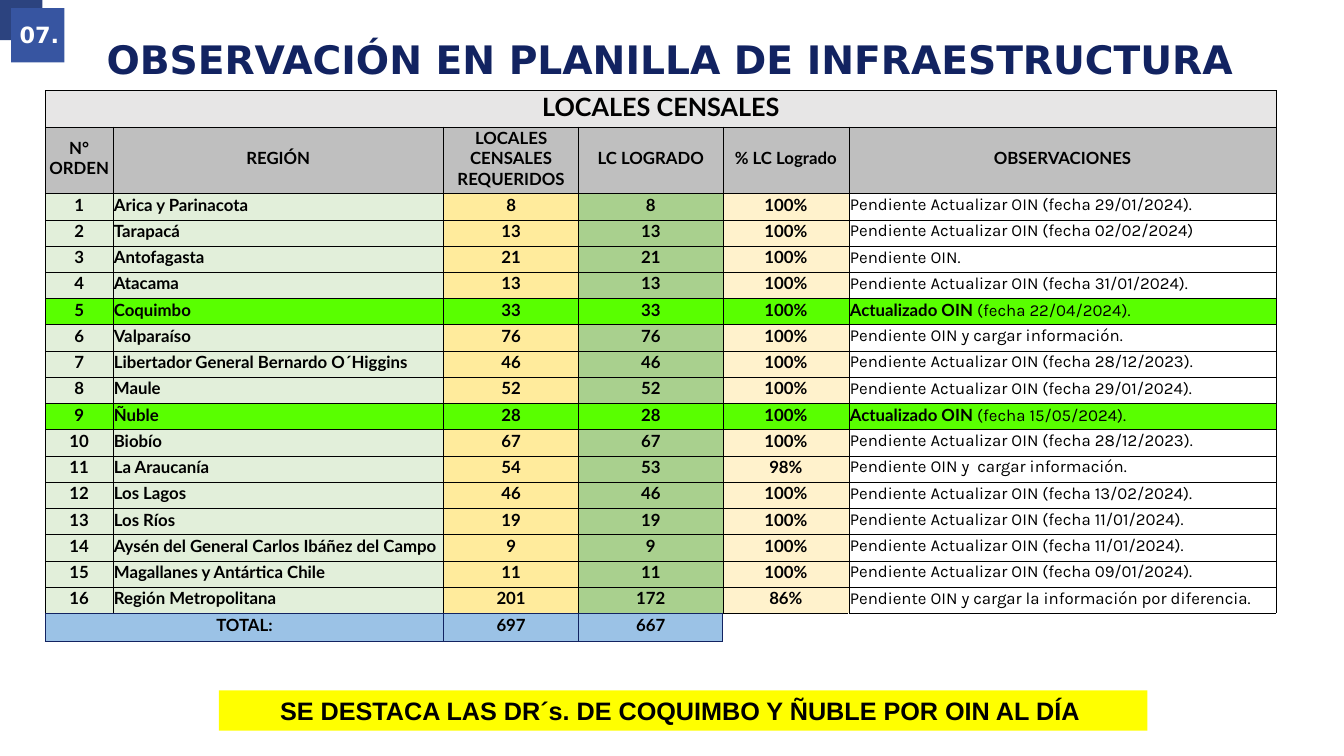
from lxml import etree
from pptx import Presentation
from pptx.dml.color import RGBColor
from pptx.enum.shapes import MSO_SHAPE
from pptx.enum.text import MSO_ANCHOR, PP_ALIGN
from pptx.oxml.ns import qn
from pptx.util import Inches, Pt

RECT = MSO_SHAPE.RECTANGLE
MIDDLE, BOTTOM = MSO_ANCHOR.MIDDLE, MSO_ANCHOR.BOTTOM
LEFT, CENTER = PP_ALIGN.LEFT, PP_ALIGN.CENTER

BLACK, NAVY, WHITE = "000000", "122361", "FFFFFF"
GREEN, GRAY, LIGHT_GRAY, BLUE = "59FF00", "BFBFBF", "E7E6E6", "9BC2E6"
COLUMN_FILLS = ["E2EFDA", "E2EFDA", "FFEB9C", "A9D08E", "FFF2CC", WHITE]
COLUMN_WIDTHS = [0.67, 3.28, 1.34, 1.43, 1.25, 4.24]
TITLE_H, HEADER_H, REGION_H, TOTAL_H = 0.36, 0.66, 0.26, 0.28

SECTION = "07."
TITLE = "OBSERVACIÓN EN PLANILLA DE INFRAESTRUCTURA"
TABLE_TITLE = "LOCALES CENSALES"
HEADERS = ["N° ORDEN", "REGIÓN", "LOCALES CENSALES REQUERIDOS",
           "LC LOGRADO", "% LC Logrado", "OBSERVACIONES"]
UPDATED = "Actualizado OIN "
REGIONS = [
    ("Arica y Parinacota", 8, 8, "100%", "Pendiente Actualizar OIN (fecha 29/01/2024)."),
    ("Tarapacá", 13, 13, "100%", "Pendiente Actualizar OIN (fecha 02/02/2024)"),
    ("Antofagasta", 21, 21, "100%", "Pendiente OIN."),
    ("Atacama", 13, 13, "100%", "Pendiente Actualizar OIN (fecha 31/01/2024)."),
    ("Coquimbo", 33, 33, "100%", "Actualizado OIN (fecha 22/04/2024)."),
    ("Valparaíso", 76, 76, "100%", "Pendiente OIN y cargar información."),
    ("Libertador General Bernardo O´Higgins", 46, 46, "100%",
     "Pendiente Actualizar OIN (fecha 28/12/2023)."),
    ("Maule", 52, 52, "100%", "Pendiente Actualizar OIN (fecha 29/01/2024)."),
    ("Ñuble", 28, 28, "100%", "Actualizado OIN (fecha 15/05/2024)."),
    ("Biobío", 67, 67, "100%", "Pendiente Actualizar OIN (fecha 28/12/2023)."),
    ("La Araucanía", 54, 53, "98%", "Pendiente OIN y  cargar información."),
    ("Los Lagos", 46, 46, "100%", "Pendiente Actualizar OIN (fecha 13/02/2024)."),
    ("Los Ríos", 19, 19, "100%", "Pendiente Actualizar OIN (fecha 11/01/2024)."),
    ("Aysén del General Carlos Ibáñez del Campo", 9, 9, "100%",
     "Pendiente Actualizar OIN (fecha 11/01/2024)."),
    ("Magallanes y Antártica Chile", 11, 11, "100%",
     "Pendiente Actualizar OIN (fecha 09/01/2024)."),
    ("Región Metropolitana", 201, 172, "86%",
     "Pendiente OIN y cargar la información por diferencia."),
]
TOTALS = ["TOTAL:", "", "697", "667"]
HIGHLIGHT = "SE DESTACA LAS DR´s. DE COQUIMBO Y ÑUBLE POR OIN AL DÍA "


def rgb(value):
    return RGBColor.from_string(value)


def style(r, size, name, color=BLACK, bold=True):
    r.font.size, r.font.name, r.font.bold = Pt(size), name, bold
    r.font.color.rgb = rgb(color)


def add_rect(s, box, fill):
    sp = s.shapes.add_shape(RECT, *map(Inches, box))
    sp.shadow.inherit = False
    sp.fill.solid()
    sp.fill.fore_color.rgb = rgb(fill)
    sp.line.fill.background()
    return sp


def write(sp, text, size, name, color, left=0.1, spacing=1.0):
    tf = sp.text_frame
    tf.word_wrap = True
    tf.vertical_anchor = MIDDLE
    tf.margin_left = Inches(left)
    p = tf.paragraphs[0]
    p.text, p.alignment, p.line_spacing = text, CENTER, spacing
    style(p.runs[0], size, name, color)


def set_borders(cell, **edges):
    tcPr = cell._tc.get_or_add_tcPr()
    ordered = [side for side in "LRTB" if side in edges]
    for i, side in enumerate(ordered):
        color, width = edges[side]
        ln = etree.Element(qn(f"a:ln{side}"), w=str(Pt(width)))
        fill = etree.SubElement(ln, qn("a:solidFill"))
        etree.SubElement(fill, qn("a:srgbClr"), val=color)
        tcPr.insert(i, ln)


def set_cell(cell, text, fill, align=CENTER, anchor=MIDDLE, size=12, border=(BLACK, 0.5), bottom=None):
    cell.margin_left = cell.margin_right = cell.margin_top = Inches(0.01)
    cell.margin_bottom = Inches(0.05)
    cell.vertical_anchor = anchor
    cell.fill.solid()
    cell.fill.fore_color.rgb = rgb(fill)
    p = cell.text_frame.paragraphs[0]
    p.text, p.alignment = text, align
    for r in p.runs:
        style(r, size, "Lato")
    set_borders(cell, L=border, R=border, T=border, B=bottom or border)


def set_observation(cell, text, fill):
    set_cell(cell, text, fill, LEFT, BOTTOM)
    p = cell.text_frame.paragraphs[0]
    if text.startswith(UPDATED):
        p.text = UPDATED
        style(p.runs[0], 12, "Lato")
        p.add_run().text = text[len(UPDATED):]
    style(p.runs[-1], 12, "Karla", bold=False)


def add_table(s):
    heights = [TITLE_H, HEADER_H] + [REGION_H] * len(REGIONS) + [TOTAL_H]
    frame = s.shapes.add_table(len(heights), len(COLUMN_WIDTHS), Inches(0.45), Inches(0.9),
                               Inches(sum(COLUMN_WIDTHS)), Inches(sum(heights)))
    table = frame.table
    table.first_row = table.horz_banding = False
    for column, width in zip(table.columns, COLUMN_WIDTHS):
        column.width = Inches(width)
    for row, height in zip(table.rows, heights):
        row.height = Inches(height)

    for c, header in enumerate(HEADERS):
        set_cell(table.cell(0, c), "" if c else TABLE_TITLE, LIGHT_GRAY, anchor=BOTTOM, size=18)
        set_cell(table.cell(1, c), header, GRAY)
    table.cell(0, 0).merge(table.cell(0, len(HEADERS) - 1))

    for n, region in enumerate(REGIONS, 1):
        updated = region[-1].startswith(UPDATED)
        fills = [GREEN] * len(HEADERS) if updated else COLUMN_FILLS
        for c, value in enumerate((n, *region[:-1])):
            bottom = (NAVY, 1) if n == len(REGIONS) and c < len(TOTALS) else None
            set_cell(table.cell(n + 1, c), str(value), fills[c],
                     LEFT if c == 1 else CENTER, bottom=bottom)
        set_observation(table.cell(n + 1, len(HEADERS) - 1), region[-1], fills[-1])

    last = len(heights) - 1
    for c, value in enumerate(TOTALS):
        set_cell(table.cell(last, c), value, BLUE, border=(NAVY, 1))
    table.cell(last, 0).merge(table.cell(last, 1))
    for c in range(len(TOTALS), len(HEADERS)):
        cell = table.cell(last, c)
        cell.margin_top = cell.margin_bottom = 0
        cell.fill.background()
        p = cell.text_frame.paragraphs[0]
        etree.SubElement(p._p, qn("a:endParaRPr"), sz="1200")
        edges = {"L": (NAVY, 1)} if c == len(TOTALS) else {}
        set_borders(cell, T=(BLACK, 0.5), **edges)


def main():
    """Build the census venues slide."""
    prs = Presentation()
    prs.slide_width, prs.slide_height = Inches(13.33), Inches(7.5)
    s = prs.slides.add_slide(prs.slide_layouts[6])
    add_rect(s, (0, 0, 0.42, 0.4), "2C437F")
    add_rect(s, (0.11, 0.08, 0.53, 0.54), "3755A1")
    section = s.shapes.add_textbox(*map(Inches, (0.07, 0.09, 0.64, 0.54)))
    write(section, SECTION, 16, "DejaVu Sans", WHITE, spacing=0.9)
    title = s.shapes.add_textbox(*map(Inches, (0.61, 0.34, 11.91, 0.54)))
    write(title, TITLE, 28, "DejaVu Sans", NAVY, left=0.25, spacing=0.9)
    add_table(s)
    highlight = add_rect(s, (2.17, 6.85, 9.21, 0.4), "FFFF00")
    write(highlight, HIGHLIGHT, 18, "Arial", BLACK)
    prs.save("out.pptx")


if __name__ == "__main__":
    main()
